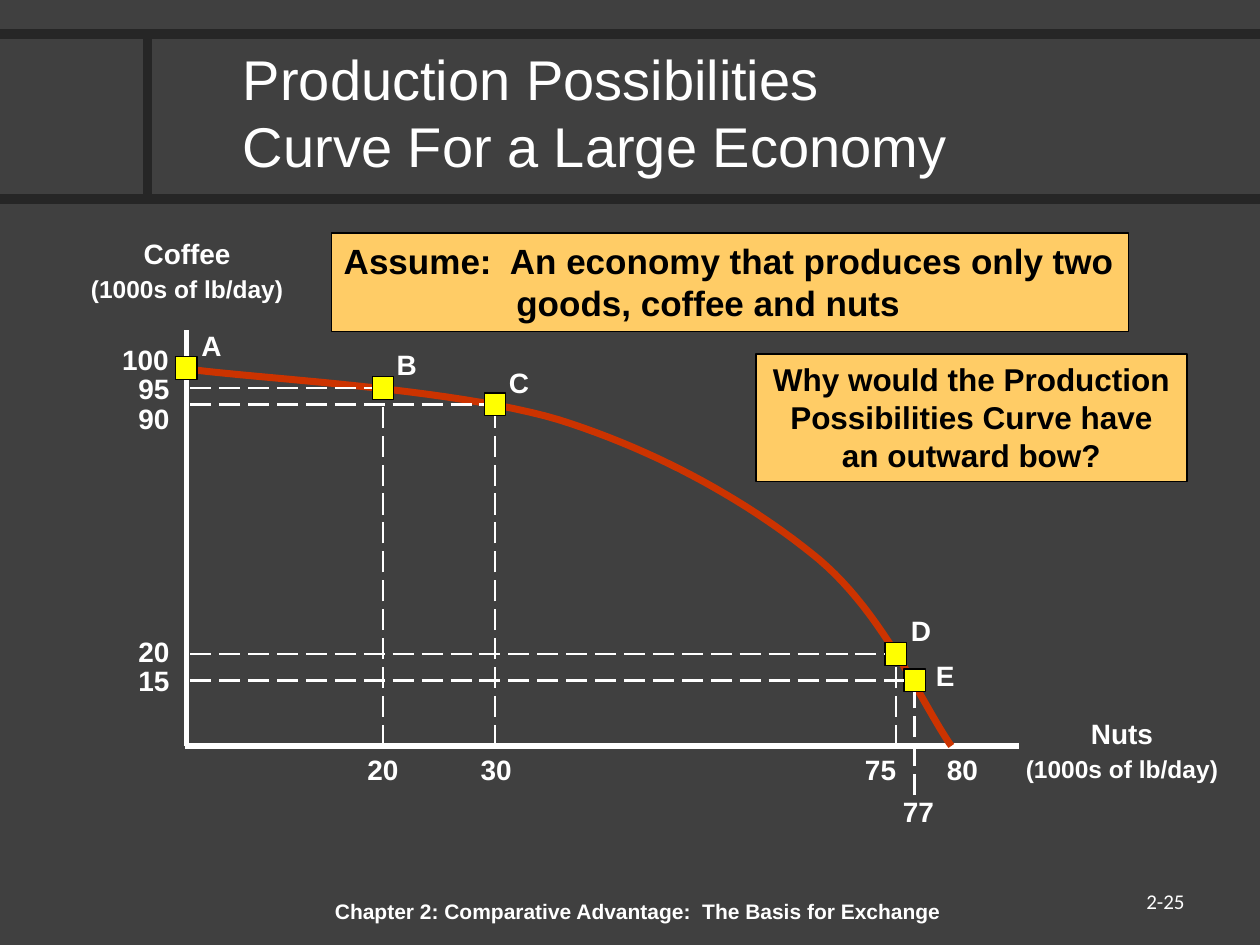
"""Build a slide on the production possibilities curve of a large economy."""
import lxml.etree
import pptx
import pptx.dml.color
import pptx.enum.dml
import pptx.enum.shapes
import pptx.enum.text
import pptx.oxml.ns
import pptx.util

Inches = pptx.util.Inches
Pt = pptx.util.Pt
ALIGN = pptx.enum.text.PP_ALIGN
ANCHOR = pptx.enum.text.MSO_ANCHOR
DASH = pptx.enum.dml.MSO_LINE.LONG_DASH

COLORS = {
    "background": "404040",
    "rule": "262626",
    "white": "FFFFFF",
    "black": "000000",
    "note": "FFCC66",
    "curve": "CC3300",
    "marker": "FFFF00",
}


def color(name):
    return pptx.dml.color.RGBColor.from_string(COLORS[name])


def write(frame, text, sizes=(16,), ink="white", bold=True, font="Arial",
          align=ALIGN.LEFT, anchor=ANCHOR.TOP, tab=None):
    frame.word_wrap = True
    frame.vertical_anchor = anchor
    frame.text = text
    for index, paragraph in enumerate(frame.paragraphs):
        paragraph.alignment = align
        paragraph.space_before = Pt(2 if index else 0)
        for run in paragraph.runs:
            run.font.size = Pt(sizes[index])
            run.font.name = font
            run.font.bold = bold
            run.font.color.rgb = color(ink)
        if tab:
            qn = pptx.oxml.ns.qn
            stops = lxml.etree.SubElement(paragraph._p.get_or_add_pPr(), qn("a:tabLst"))
            lxml.etree.SubElement(stops, qn("a:tab"), pos=str(Inches(tab)), algn="l")


def bezier(start, control1, control2, end, steps=24):
    for step in range(1, steps + 1):
        t = step / steps
        weights = ((1 - t) ** 3, 3 * t * (1 - t) ** 2, 3 * t * t * (1 - t), t ** 3)
        yield tuple(
            sum(w * point[axis] for w, point in zip(weights, (start, control1, control2, end)))
            for axis in (0, 1)
        )


class Canvas:
    def __init__(self, slide):
        self.slide = slide
        slide.background.fill.solid()
        slide.background.fill.fore_color.rgb = color("background")

    def text(self, left, top, width, height, text, **style):
        box = self.slide.shapes.add_textbox(*map(Inches, (left, top, width, height)))
        write(box.text_frame, text, **style)

    def rectangle(self, left, top, width, height, fill):
        shape = self.slide.shapes.add_shape(
            pptx.enum.shapes.MSO_SHAPE.RECTANGLE, *map(Inches, (left, top, width, height)))
        shape.shadow.inherit = False
        shape.fill.solid()
        shape.fill.fore_color.rgb = color(fill)
        shape.line.color.rgb = color("black")
        shape.line.width = Pt(0.75)
        return shape

    def note(self, left, top, width, height, text, **style):
        box = self.rectangle(left, top, width, height, "note")
        write(box.text_frame, text, ink="black", **style)

    def marker(self, x, y):
        width, height = 0.17, 0.18
        return self.rectangle(x - width / 2, y - height / 2, width, height, "marker")

    def line(self, start, end, width, ink="white", dash=None, join=None):
        connector = self.slide.shapes.add_connector(
            pptx.enum.shapes.MSO_CONNECTOR.STRAIGHT, *map(Inches, (*start, *end)))
        connector.line.color.rgb = color(ink)
        connector.line.width = Pt(width)
        if dash:
            connector.line.dash_style = dash
        if join:
            connector.end_connect(*join)
        lxml.etree.SubElement(connector._element.spPr, pptx.oxml.ns.qn("a:effectLst"))

    def curve(self, start, segments, width, ink):
        points = [start]
        for segment in segments:
            points.extend(bezier(points[-1], *segment))
        emus = [(Inches(x), Inches(y)) for x, y in points]
        builder = self.slide.shapes.build_freeform(*emus[0])
        builder.add_line_segments(emus[1:], close=False)
        shape = builder.convert_to_shape()
        shape.shadow.inherit = False
        shape.fill.background()
        shape.line.color.rgb = color(ink)
        shape.line.width = Pt(width)


def main():
    deck = pptx.Presentation()
    deck.slide_width, deck.slide_height = Inches(10), Inches(7.5)
    canvas = Canvas(deck.slides.add_slide(deck.slide_layouts[6]))

    for start, end in (((0, 1.58), (10, 1.58)), ((1.17, 0.27), (1.17, 1.58)),
                       ((0, 0.27), (10, 0.27))):
        canvas.line(start, end, 5.5, "rule")
    canvas.text(1.83, 0.29, 7.42, 1.19, "Production Possibilities\vCurve For a Large Economy",
                sizes=(32,), bold=False, anchor=ANCHOR.MIDDLE)

    axis_x, axis_y = 1.48, 5.92
    canvas.line((axis_x, 2.62), (axis_x, axis_y), 3)
    canvas.line((1.47, axis_y), (8.09, axis_y), 3)
    for left, top, width, good in ((0.54, 1.83, 1.89, "Coffee"), (8.01, 5.64, 1.79, "Nuts")):
        canvas.text(left, top, width, 0.62, good + "\n(1000s of lb/day)",
                    sizes=(16, 14), align=ALIGN.CENTER)

    canvas.note(2.63, 1.85, 6.33, 0.78,
                "Assume:  An economy that produces only two\v\tgoods, coffee and nuts",
                sizes=(20,), tab=1.37)
    canvas.note(6, 2.81, 3.42, 1.01,
                "Why would the Production Possibilities Curve have an outward bow?",
                sizes=(18,), align=ALIGN.CENTER)

    canvas.curve((1.5, 2.93), (
        ((1.98, 3), (3.59, 3.08), (4.43, 3.33)),
        ((5.26, 3.59), (5.98, 4.01), (6.5, 4.44)),
        ((7.02, 4.88), (7.33, 5.61), (7.55, 5.92)),
    ), 4, "curve")

    guide_feet = {"B": axis_y, "C": axis_y, "D": axis_y, "E": 6.31}
    for name, x, y, label_left, label_top in (
        ("A", 1.48, 2.92, 1.5, 2.56),
        ("B", 3.04, 3.08, 3.05, 2.71),
        ("C", 3.93, 3.21, 3.94, 2.85),
        ("D", 7.11, 5.19, 7.13, 4.82),
        ("E", 7.26, 5.4, 7.33, 5.18),
    ):
        marker = canvas.marker(x, y)
        canvas.text(label_left, label_top, 0.32, 0.37, name)
        if name in guide_feet:
            canvas.line((x, guide_feet[name]), (x, y), 1.5, dash=DASH, join=(marker, 2))
            canvas.line((1.51, y), (x, y), 1.5, dash=DASH, join=(marker, 1))

    canvas.text(0.87, 2.67, 0.62, 0.37, "100")
    for coffee, top in (("95", 2.9), ("90", 3.14), ("20", 4.99), ("15", 5.22)):
        canvas.text(1, top, 0.46, 0.37, coffee)
    for nuts, left, top in (("20", 2.8, axis_y), ("30", 3.7, axis_y), ("75", 6.75, axis_y),
                            ("77", 7.05, 6.26), ("80", 7.4, axis_y)):
        canvas.text(left, top, 0.46, 0.37, nuts, align=ALIGN.RIGHT)

    canvas.text(2.56, 7.08, 5.17, 0.25,
                "Chapter 2: Comparative Advantage:  The Basis for Exchange", sizes=(12,))
    canvas.text(8.54, 6.95, 0.96, 0.4, "2-25", sizes=(12,), bold=False, font="Calibri",
                align=ALIGN.RIGHT, anchor=ANCHOR.MIDDLE)
    deck.save("out.pptx")


if __name__ == "__main__":
    main()
